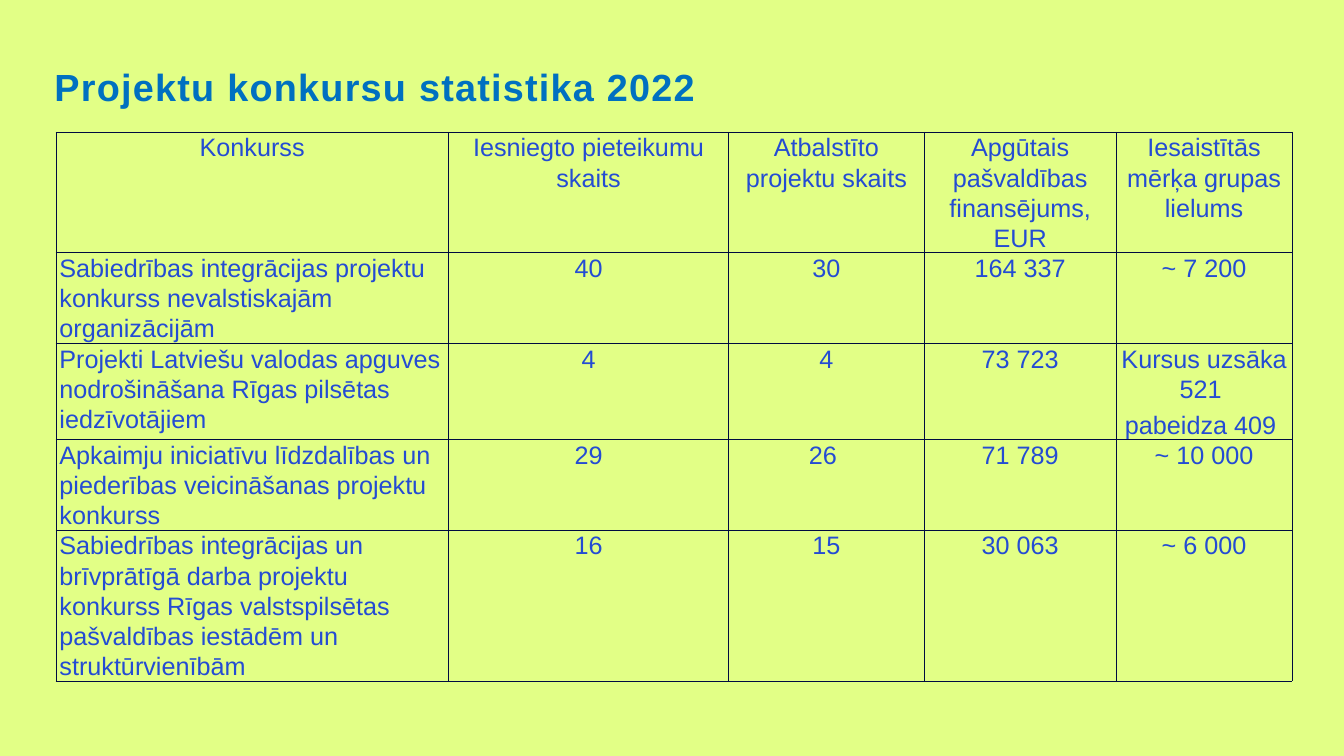
from lxml.etree import SubElement
from pptx import Presentation
from pptx.dml.color import RGBColor
from pptx.enum.text import MSO_ANCHOR, PP_ALIGN
from pptx.oxml import parse_xml
from pptx.oxml.ns import nsdecls
from pptx.util import Inches, Pt

COLUMN_WIDTHS = [7.79, 5.56, 3.88, 3.81, 3.49]
ROW_HEIGHTS = [2.03, 1.65, 1.72, 1.6, 2.71]
# Each cell is a list of paragraphs separated by line breaks
ROWS = [
    ["Konkurss", "Iesniegto pieteikumu skaits", "Atbalstīto projektu skaits",
     "Apgūtais pašvaldības finansējums, EUR", "Iesaistītās mērķa grupas lielums"],
    ["Sabiedrības integrācijas projektu konkurss nevalstiskajām organizācijām",
     "40", "30", "164 337", "~ 7 200"],
    ["Projekti Latviešu valodas apguves nodrošināšana Rīgas pilsētas iedzīvotājiem",
     "4", "4", "73 723", "Kursus uzsāka 521 \npabeidza 409 "],
    ["Apkaimju iniciatīvu līdzdalības un piederības veicināšanas projektu konkurss",
     "29", "26 ", "71 789", "~ 10 000"],
    ["Sabiedrības integrācijas un brīvprātīgā darba projektu konkurss Rīgas "
     "valstspilsētas pašvaldības iestādēm un struktūrvienībām",
     "16", "15", "30 063", "~ 6 000"],
]


def add_run(paragraph, text, size, color, bold=False):
    run = paragraph.add_run()
    run.text = text
    run.font.name = "Arial"
    run.font.size = Pt(size)
    run.font.bold = bold
    run.font.color.rgb = RGBColor.from_string(color)
    return run


def set_borders(cell, color, width):
    properties = cell._tc.get_or_add_tcPr()
    for index, side in enumerate(["lnL", "lnR", "lnT", "lnB"]):
        properties.insert(index, parse_xml(
            f'<a:{side} {nsdecls("a")} w="{Pt(width)}"><a:solidFill>'
            f'<a:srgbClr val="{color}"/></a:solidFill></a:{side}>'))


presentation = Presentation()
presentation.slide_width = Inches(26.67)
presentation.slide_height = Inches(15)
slide = presentation.slides.add_slide(presentation.slide_layouts[5])
slide.background.fill.solid()
slide.background.fill.fore_color.rgb = RGBColor.from_string("E2FF86")

# Title
title = slide.shapes.title
title.left, title.top = Inches(1.08), Inches(1.37)
title.width, title.height = Inches(17.22), Inches(1.25)
frame = title.text_frame
frame.margin_left = frame.margin_right = frame.margin_top = frame.margin_bottom = 0
frame.vertical_anchor = MSO_ANCHOR.TOP
frame.word_wrap = True
paragraph = frame.paragraphs[0]
paragraph.alignment = PP_ALIGN.LEFT
paragraph.line_spacing = 0.9
title_run = add_run(paragraph, "Projektu konkursu statistika 2022", 54, "0070C0", bold=True)
title_run.font._element.set("spc", "180")

# Statistics table
table = slide.shapes.add_table(
    len(ROWS), len(COLUMN_WIDTHS), Inches(1.11), Inches(2.62),
    Inches(sum(COLUMN_WIDTHS)), Inches(sum(ROW_HEIGHTS))).table
table.first_row = False
table.horz_banding = False
for column, width in zip(table.columns, COLUMN_WIDTHS):
    column.width = Inches(width)
for row, height in zip(table.rows, ROW_HEIGHTS):
    row.height = Inches(height)

for row_index, texts in enumerate(ROWS):
    for column_index, text in enumerate(texts):
        cell = table.cell(row_index, column_index)
        is_last_column = column_index == len(texts) - 1
        cell.margin_left = cell.margin_right = Inches(0 if is_last_column else 0.07)
        cell.margin_top = cell.margin_bottom = 0
        cell.vertical_anchor = MSO_ANCHOR.TOP
        cell.fill.background()
        set_borders(cell, "000B40", 1)
        is_name = column_index == 0 and row_index > 0
        for index, line in enumerate(text.split("\n")):
            frame = cell.text_frame
            paragraph = frame.add_paragraph() if index else frame.paragraphs[0]
            paragraph.alignment = PP_ALIGN.LEFT if is_name else PP_ALIGN.CENTER
            paragraph.line_spacing = 1.07
            paragraph.space_after = Pt(8)
            add_run(paragraph, line, 36, "244CD3")

presentation.save("out.pptx")
